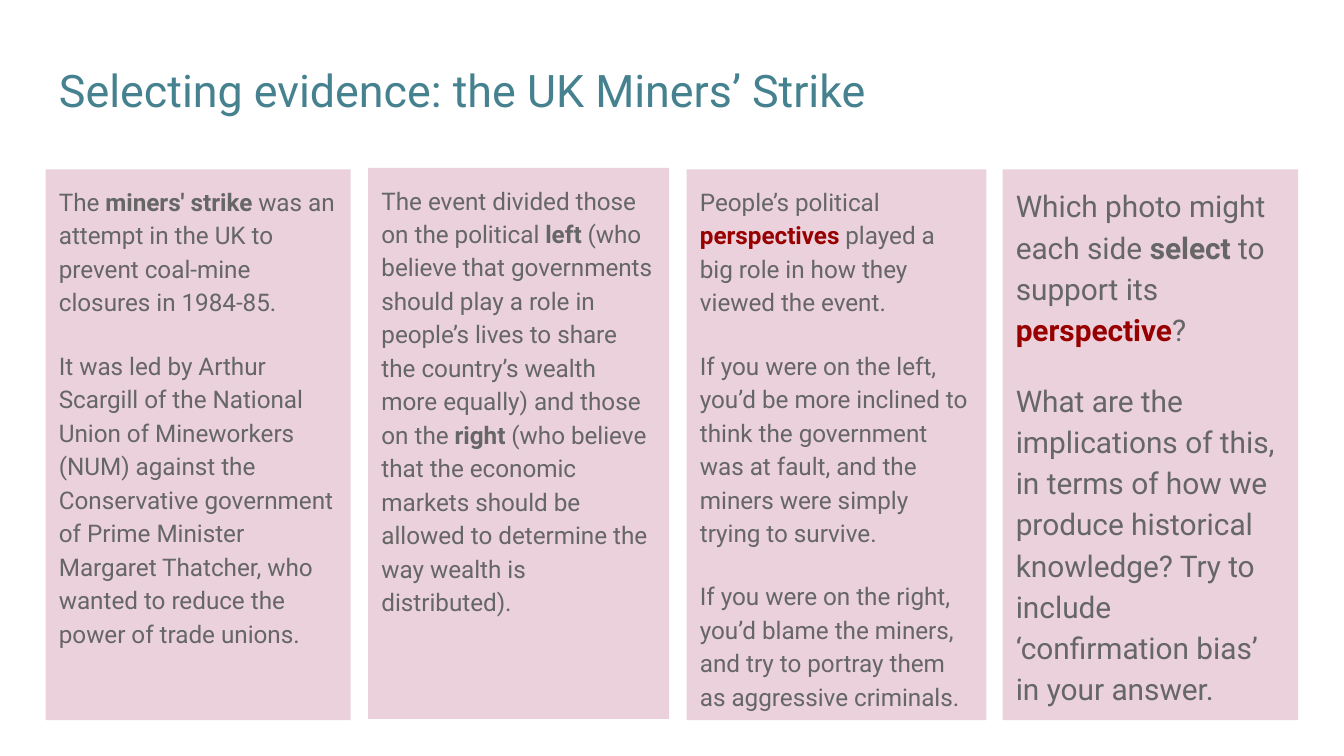
"""Build a slide on selecting evidence about the UK Miners' Strike."""

from dataclasses import dataclass
from typing import NamedTuple

from pptx import Presentation
from pptx.dml.color import RGBColor
from pptx.enum.shapes import MSO_SHAPE
from pptx.enum.text import MSO_ANCHOR, PP_ALIGN
from pptx.util import Inches, Pt


@dataclass(frozen=True)
class Theme:
    font: str = "Roboto"
    title_color: RGBColor = RGBColor(0x45, 0x81, 0x8E)
    text_color: RGBColor = RGBColor(0x66, 0x66, 0x66)
    key_color: RGBColor = RGBColor(0x98, 0x00, 0x00)
    panel_fill: RGBColor = RGBColor(0xEA, 0xD1, 0xDC)
    title_size: float = 24
    body_size: float = 13
    question_size: float = 16
    line_spacing: float = 1.15
    paragraph_gap: float = 16


THEME = Theme()


class Span(NamedTuple):
    text: str
    bold: bool = False
    color: RGBColor = THEME.text_color


class Panel(NamedTuple):
    left: float
    top: float
    width: float
    size: float
    paragraphs: list[list[Span]]


def key_term(text: str) -> Span:
    return Span(text, bold=True, color=THEME.key_color)


SLIDE_WIDTH = 10
SLIDE_HEIGHT = SLIDE_WIDTH * 9 / 16
PANEL_HEIGHT = 4.1
PANELS = [
    Panel(0.34, 1.26, 2.27, THEME.body_size, [
        [Span("The "), Span("miners' strike", bold=True),
         Span(" was an attempt in the UK to prevent coal-mine closures in 1984-85.")],
        [Span("It was led by Arthur Scargill of the National Union of Mineworkers (NUM) "
              "against the Conservative government of Prime Minister Margaret Thatcher, "
              "who wanted to reduce the power of trade unions.")],
    ]),
    Panel(2.74, 1.25, 2.24, THEME.body_size, [
        [Span("The event divided those on the political "), Span("left", bold=True),
         Span(" (who believe that governments should play a role in people’s lives "
              "to share the country’s wealth more equally) and those on the "),
         Span("right", bold=True),
         Span(" (who believe that the economic markets should be allowed to determine "
              "the way wealth is distributed).")],
    ]),
    Panel(5.11, 1.26, 2.23, THEME.body_size, [
        [Span("People’s political "), key_term("perspectives"),
         Span(" played a big role in how they viewed the event.")],
        [Span("If you were on the left, you’d be more inclined to think the government "
              "was at fault, and the miners were simply trying to survive.")],
        [Span("If you were on the right, you’d blame the miners, and try to portray them "
              "as aggressive criminals.")],
    ]),
    Panel(7.46, 1.26, 2.2, THEME.question_size, [
        [Span("Which photo might each side "), Span("select", bold=True),
         Span(" to support its "), key_term("perspective"), Span("?")],
        [Span("What are the implications of this, in terms of how we produce historical "
              "knowledge? Try to include ‘confirmation bias’ in your answer.")],
    ]),
]


def write_text(box, paragraphs: list[list[Span]], *, size: float,
               line_spacing: float = 1.0, gap: float = 0) -> None:
    frame = box.text_frame
    frame.word_wrap = True
    frame.vertical_anchor = MSO_ANCHOR.TOP
    frame.margin_left = frame.margin_right = Inches(0.1)
    frame.margin_top = frame.margin_bottom = Inches(0.1)
    for index, spans in enumerate(paragraphs):
        paragraph = frame.add_paragraph() if index else frame.paragraphs[0]
        paragraph.alignment = PP_ALIGN.LEFT
        paragraph.line_spacing = line_spacing
        paragraph.space_before = Pt(gap if index else 0)
        for span in spans:
            run = paragraph.add_run()
            run.text = span.text
            run.font.name = THEME.font
            run.font.size = Pt(size)
            run.font.bold = span.bold
            run.font.color.rgb = span.color


def draw_title(page, text: str) -> None:
    box = page.shapes.add_textbox(Inches(0.34), Inches(0.37), Inches(9.32), Inches(0.67))
    write_text(box, [[Span(text, color=THEME.title_color)]], size=THEME.title_size)


def draw_panel(page, panel: Panel) -> None:
    box = page.shapes.add_shape(MSO_SHAPE.RECTANGLE, Inches(panel.left), Inches(panel.top),
                                Inches(panel.width), Inches(PANEL_HEIGHT))
    box.shadow.inherit = False
    box.fill.solid()
    box.fill.fore_color.rgb = THEME.panel_fill
    box.line.fill.background()
    write_text(box, panel.paragraphs, size=panel.size,
               line_spacing=THEME.line_spacing, gap=THEME.paragraph_gap)


def main() -> None:
    deck = Presentation()
    deck.slide_width, deck.slide_height = Inches(SLIDE_WIDTH), Inches(SLIDE_HEIGHT)
    page = deck.slides.add_slide(deck.slide_layouts[6])
    draw_title(page, "Selecting evidence: the UK Miners’ Strike")
    for panel in PANELS:
        draw_panel(page, panel)
    deck.save("out.pptx")


if __name__ == "__main__":
    main()
